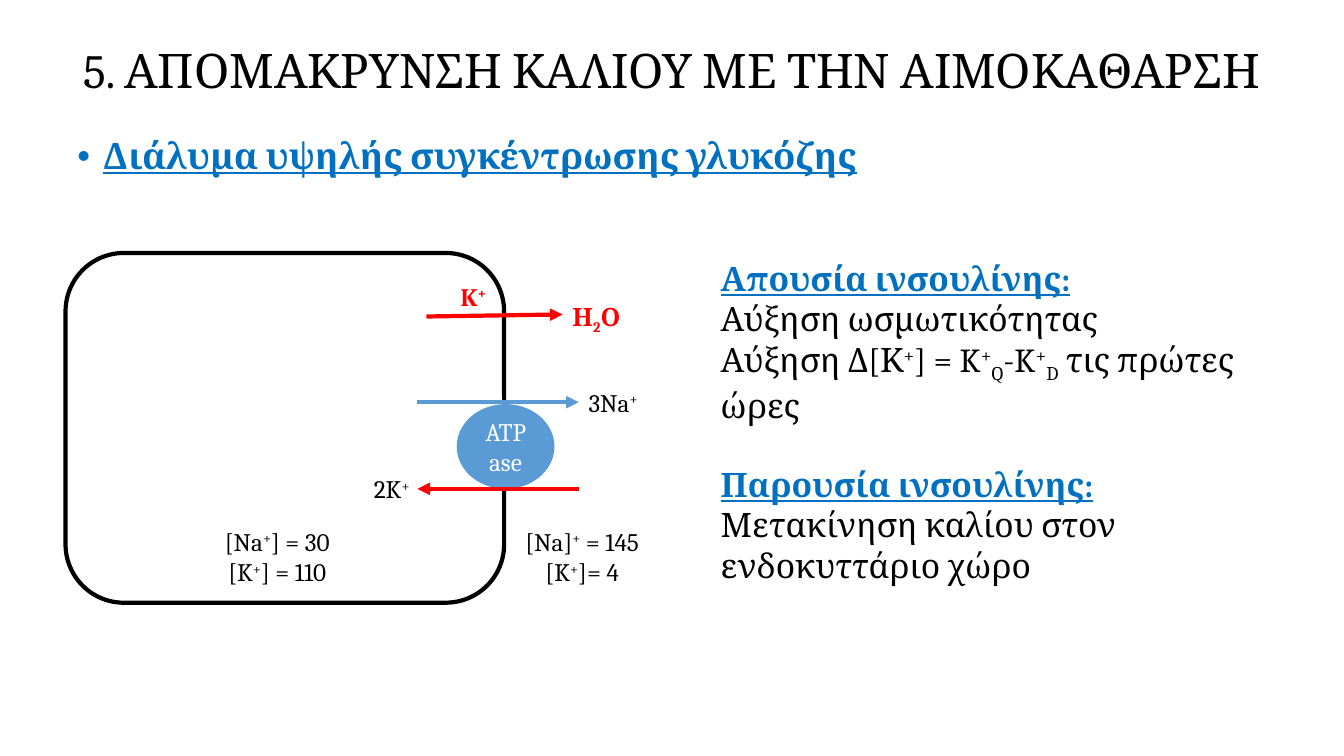
from lxml import etree
from pptx import Presentation
from pptx.dml.color import RGBColor
from pptx.enum.shapes import MSO_CONNECTOR, MSO_SHAPE
from pptx.enum.text import MSO_ANCHOR, PP_ALIGN
from pptx.oxml.ns import qn
from pptx.util import Inches, Pt

CENTER, LEFT = PP_ALIGN.CENTER, PP_ALIGN.LEFT
MIDDLE, TOP = MSO_ANCHOR.MIDDLE, MSO_ANCHOR.TOP
STRAIGHT = MSO_CONNECTOR.STRAIGHT
CELL_OVAL, PUMP_OVAL = MSO_SHAPE.ROUNDED_RECTANGLE, MSO_SHAPE.OVAL

FONT = "Cambria"
BLACK, WHITE, RED = "000000", "FFFFFF", "FF0000"
HEADING_BLUE, PUMP_BLUE = "0070C0", "5B9BD5"
BASELINES = {"^": "30000", "_": "-25000"}
HEADING = {"bold": True, "underline": True}

COLUMNS, ROWS = 133.3, 75
GRID_STEP = Inches(0.1)


def grid(*cells):
    """Turn columns and rows of the slide grid into lengths."""
    return [round(cell * GRID_STEP) for cell in cells]


def color(hex_value):
    return RGBColor.from_string(hex_value)


def split_marks(text):
    """Yield (text, mark) pairs; ^ raises and _ lowers the one character after it."""
    plain, letters = "", iter(text)
    for letter in letters:
        if letter in BASELINES:
            if plain:
                yield plain, None
            plain = ""
            yield next(letters), letter
        else:
            plain += letter
    if plain:
        yield plain, None


def write(para, text, size, hex_value, align=LEFT, style=None, spacing=None):
    for name, value in {"alignment": align, **(spacing or {})}.items():
        setattr(para, name, value)
    font_values = {"name": FONT, "size": Pt(size), **(style or {})}
    for part, mark in split_marks(text):
        span = para.add_run()
        span.text = part
        for name, value in font_values.items():
            setattr(span.font, name, value)
        span.font.color.rgb = color(hex_value)
        if mark:
            span.font._element.set("baseline", BASELINES[mark])


def add_text(page, cells, lines, size=18, hex_value=BLACK, **formats):
    box = page.shapes.add_textbox(*grid(*cells))
    frame = box.text_frame
    frame.word_wrap = True
    for index, line in enumerate(lines):
        para = frame.add_paragraph() if index else frame.paragraphs[0]
        write(para, line, size, hex_value, **formats)
    return frame


def add_bullet(para, indent):
    properties = para._p.get_or_add_pPr()
    properties.set("marL", str(indent))
    properties.set("indent", str(-indent))
    font = etree.SubElement(properties, qn("a:buFont"))
    font.set("typeface", "Arial")
    etree.SubElement(properties, qn("a:buChar")).set("char", "•")


def add_outline(page, preset, cells, line=None, fill=None):
    shape = page.shapes.add_shape(preset, *grid(*cells))
    shape.shadow.inherit = False
    if fill:
        shape.fill.solid()
        shape.fill.fore_color.rgb = color(fill)
    else:
        shape.fill.background()
    if line:
        shape.line.color.rgb = color(line)
        shape.line.width = Pt(3)
    else:
        shape.line.fill.background()
    return shape


def add_arrow(page, ends, hex_value):
    arrow = page.shapes.add_connector(STRAIGHT, *grid(*ends))
    arrow.line.color.rgb = color(hex_value)
    arrow.line.width = Pt(3)
    head = etree.SubElement(arrow.line._get_or_add_ln(), qn("a:tailEnd"))
    head.set("type", "triangle")
    etree.SubElement(arrow._element.spPr, qn("a:effectLst"))


def add_title(page, text):
    title = page.shapes.title
    title.left, title.top, title.width, title.height = grid(0, 0, COLUMNS, 14.5)
    title.text_frame.vertical_anchor = MIDDLE
    write(title.text_frame.paragraphs[0], text, 34, BLACK, CENTER,
          spacing={"line_spacing": 0.9})


def add_topic(page, text):
    frame = add_text(page, (6.7, 13.2, 119.3, 51.4), [text], 26, HEADING_BLUE,
                     style=HEADING,
                     spacing={"line_spacing": 0.9, "space_before": Pt(10)})
    add_bullet(frame.paragraphs[0], Inches(0.25))


def add_insulin_effects(page, sections):
    frame = add_text(page, (70.5, 25.1, 60.4, 37.4), [])
    para = frame.paragraphs[0]
    for index, (heading, effects) in enumerate(sections):
        gap = {"space_before": Pt(28)} if index else None
        if index:
            para = frame.add_paragraph()
        write(para, heading, 24, HEADING_BLUE, style=HEADING, spacing=gap)
        for effect in effects:
            write(frame.add_paragraph(), effect, 24, BLACK)


def add_cell_diagram(page):
    add_outline(page, CELL_OVAL, (6.5, 25.1, 43.5, 34.7), line=BLACK)
    pump = add_outline(page, PUMP_OVAL, (45.3, 40.1, 9.7, 8.4), fill=PUMP_BLUE)
    pump.text_frame.word_wrap = True
    pump.text_frame.vertical_anchor = MIDDLE
    write(pump.text_frame.paragraphs[0], "ATPase", 18, WHITE, CENTER)

    for ends, hex_value in [
        ((41.4, 39.9, 57.4, 39.9), PUMP_BLUE),
        ((57.4, 48.5, 41.4, 48.5), RED),
        ((42.3, 31.4, 55.8, 31.2), RED),
    ]:
        add_arrow(page, ends, hex_value)

    add_text(page, (57.4, 37.9, 9.3, 4), ["3Na^+"])
    add_text(page, (36.1, 46.5, 6.7, 4), ["2K^+"])
    add_text(page, (50.1, 51.7, 15.3, 7.1), ["[Na]^+ = 145", "[K^+]= 4"],
             align=CENTER)
    add_text(page, (20.6, 51.7, 13.8, 7.1), ["[Na^+] = 30", "[K^+] = 110"],
             align=CENTER)
    for cells, label in [((55.8, 29.4, 9.3, 4), "Η_2Ο"),
                         ((44.7, 27.4, 9.3, 4), "K^+")]:
        add_text(page, cells, [label], hex_value=RED, style={"bold": True})


def main():
    deck = Presentation()
    deck.slide_width, deck.slide_height = grid(COLUMNS, ROWS)
    page = deck.slides.add_slide(deck.slide_layouts.get_by_name("Title Only"))
    add_title(page, "5. ΑΠΟΜΑΚΡΥΝΣΗ ΚΑΛΙΟΥ ΜΕ ΤΗΝ ΑΙΜΟΚΑΘΑΡΣΗ")
    add_topic(page, "Διάλυμα υψηλής συγκέντρωσης γλυκόζης")
    add_insulin_effects(page, [
        ("Απουσία ινσουλίνης:",
         ["Αύξηση ωσμωτικότητας",
          "Αύξηση Δ[Κ^+] = K^+_Q-K^+_D τις πρώτες ώρες"]),
        ("Παρουσία ινσουλίνης:",
         ["Μετακίνηση καλίου στον ενδοκυττάριο χώρο"]),
    ])
    add_cell_diagram(page)
    deck.save("out.pptx")


if __name__ == "__main__":
    main()
